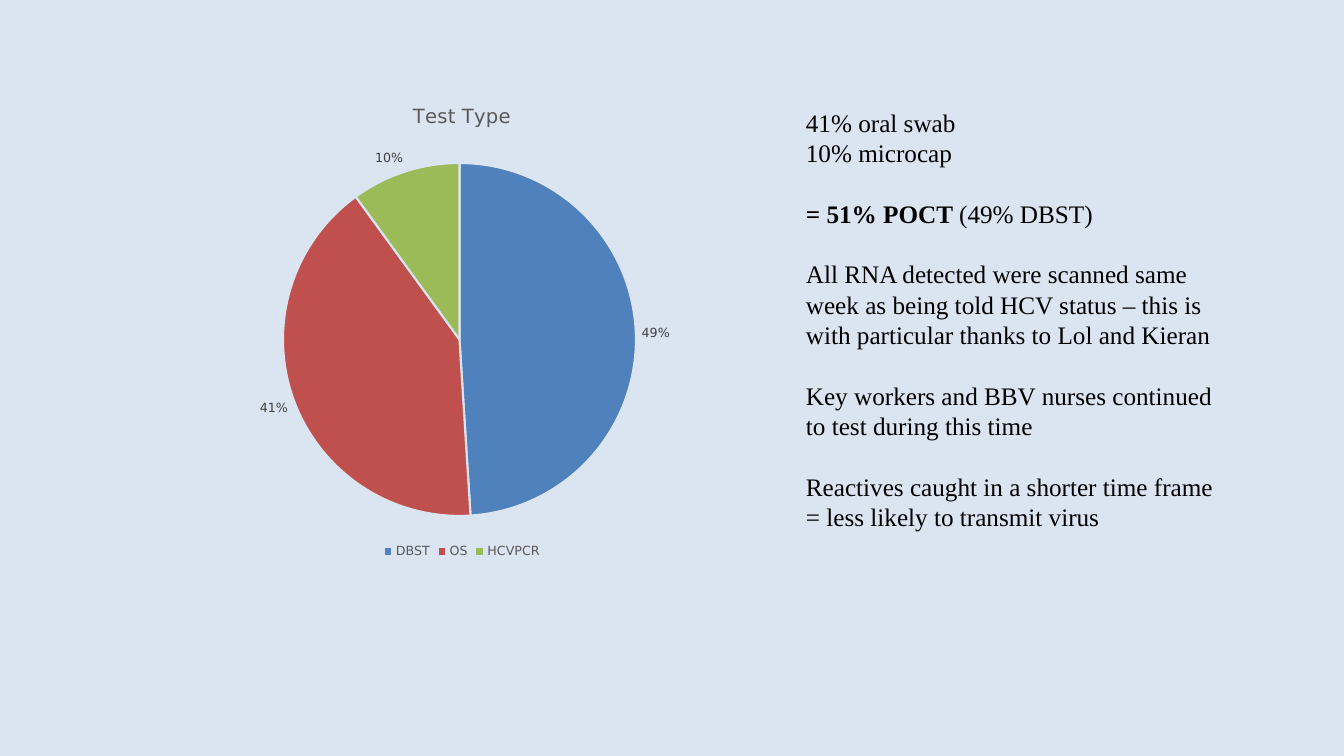
from dataclasses import dataclass

from lxml.etree import SubElement
from pptx import Presentation
from pptx.chart.data import CategoryChartData
from pptx.dml.color import RGBColor
from pptx.enum.chart import XL_CHART_TYPE as ChartType
from pptx.enum.chart import XL_LABEL_POSITION as LabelPosition
from pptx.enum.chart import XL_LEGEND_POSITION as LegendPosition
from pptx.enum.text import MSO_AUTO_SIZE as AutoSize
from pptx.oxml.ns import qn
from pptx.util import Emu, Pt

PAGE_WIDTH, PAGE_HEIGHT = 1344, 756
EMU_PER_PX = 12192000 / PAGE_WIDTH


@dataclass(frozen=True)
class Theme:
    background: str = "DBE5F1"
    text: str = "000000"
    muted: str = "595959"
    label: str = "404040"
    slices: tuple = ("4F81BD", "C0504D", "9BBB59")
    body_font: str = "Times New Roman"
    chart_font: str = "DejaVu Sans"
    body_size: float = 18
    body_line: float = 21.65
    title_size: float = 14
    chart_size: float = 10
    small_size: float = 9


def px(*lengths):
    return [Emu(round(length * EMU_PER_PX)) for length in lengths]


def style_font(font, name, size, color):
    font.name, font.size = name, Pt(size)
    font.color.rgb = RGBColor.from_string(color)


class SlideBuilder:
    def __init__(self, deck, theme):
        self.theme = theme
        self.page = deck.slides.add_slide(deck.slide_layouts[6])
        self.paint(self.page.background.fill, theme.background)

    def paint(self, fill, color):
        fill.solid()
        fill.fore_color.rgb = RGBColor.from_string(color)

    def pie(self, title, shares, frame, plot_frame):
        theme = self.theme
        data = CategoryChartData()
        data.categories = list(shares)
        data.add_series("Series 1", list(shares.values()))
        chart = self.page.shapes.add_chart(ChartType.PIE, *px(*frame), data).chart
        style_font(chart.font, theme.chart_font, theme.chart_size, theme.text)

        chart.has_title = True
        heading = chart.chart_title.text_frame.paragraphs[0]
        heading.text = title
        style_font(heading.font, theme.chart_font, theme.title_size, theme.muted)
        heading.font.bold = False

        chart.has_legend = True
        chart.legend.position = LegendPosition.BOTTOM
        chart.legend.include_in_layout = False
        style_font(chart.legend.font, theme.chart_font, theme.small_size, theme.muted)

        plot = chart.plots[0]
        plot.vary_by_categories = True
        plot.has_data_labels = True
        labels = plot.data_labels
        labels.show_percentage, labels.show_value = True, False
        labels.number_format, labels.number_format_is_linked = "0%", False
        labels.position = LabelPosition.OUTSIDE_END
        style_font(labels.font, theme.chart_font, theme.small_size, theme.label)

        for index, color in enumerate(theme.slices):
            part = plot.series[0].points[index].format
            self.paint(part.fill, color)
            self.paint(part.line.fill, theme.background)
            part.line.width = Pt(1.5)
        self.place_plot(chart, frame, plot_frame)

    def place_plot(self, chart, frame, plot_frame):
        """Fix the inner plot area, given in slide px, within the chart frame."""
        left, top, width, height = frame
        x, y, w, h = plot_frame
        area = chart.plots[0]._element.getparent()
        layout = area.find(qn("c:layout"))
        if layout is None:
            layout = area.makeelement(qn("c:layout"))
            area.insert(0, layout)
        manual = SubElement(layout, qn("c:manualLayout"))
        settings = {
            "layoutTarget": "inner", "xMode": "edge", "yMode": "edge",
            "x": (x - left) / width, "y": (y - top) / height,
            "w": w / width, "h": h / height,
        }
        for name, value in settings.items():
            SubElement(manual, qn(f"c:{name}")).set("val", str(value))

    def text(self, frame, groups):
        """Write groups of paragraphs, one line apart; a paragraph lists (text, bold) spans."""
        theme = self.theme
        box = self.page.shapes.add_textbox(*px(*frame)).text_frame
        box.word_wrap = True
        box.auto_size = AutoSize.SHAPE_TO_FIT_TEXT
        para = None
        for number, group in enumerate(groups):
            for position, spans in enumerate(group):
                para = box.add_paragraph() if para else box.paragraphs[0]
                para.line_spacing = Pt(theme.body_line)
                if number and not position:
                    para.space_before = Pt(theme.body_line)
                style_font(para.font, theme.body_font, theme.body_size, theme.text)
                for words, bold in spans:
                    span = para.add_run()
                    span.text = words
                    if bold:
                        span.font.bold = True


def main():
    deck = Presentation()
    deck.slide_width, deck.slide_height = px(PAGE_WIDTH, PAGE_HEIGHT)
    slide = SlideBuilder(deck, Theme())
    slide.pie(
        "Test Type",
        {"DBST": 49, "OS": 41, "HCVPCR": 10},
        frame=(112, 84, 700, 479),
        plot_frame=(283, 163, 353, 353),
    )
    slide.text(
        (796, 102, 440, 499),
        [
            [[("41% oral swab", False)], [("10% microcap", False)]],
            [[("= 51% POCT ", True), ("(49% DBST)", False)]],
            [[("All RNA detected were scanned same week as being told HCV status "
               "– this is with particular thanks to Lol and Kieran", False)]],
            [[("Key workers and BBV nurses continued to test during this time", False)]],
            [[("Reactives caught in a shorter time frame "
               "= less likely to transmit virus", False)]],
        ],
    )
    deck.save("out.pptx")


if __name__ == "__main__":
    main()
